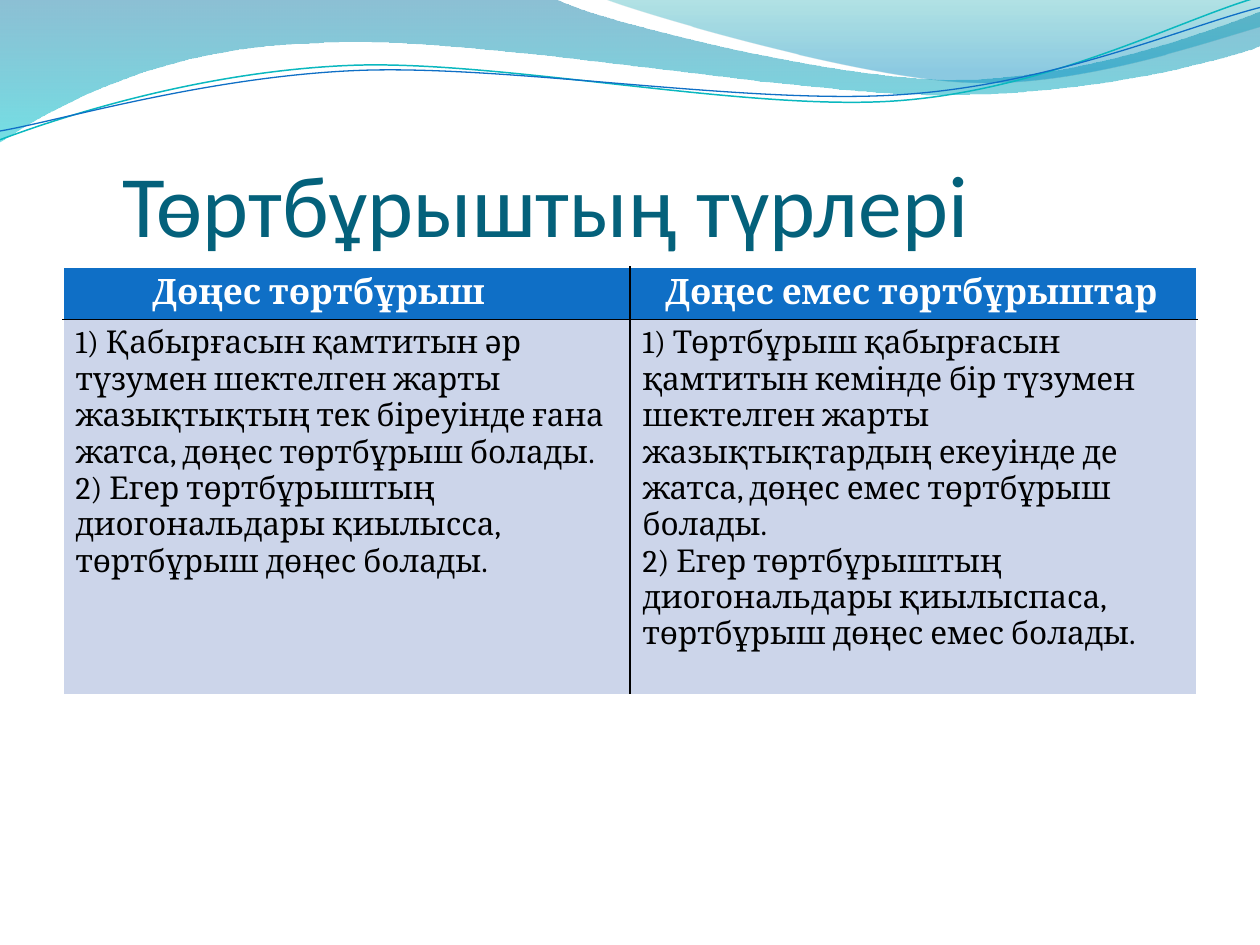
"""Build a slide comparing convex and non-convex quadrilaterals."""
from dataclasses import dataclass
from math import cos, radians, sin
from typing import NamedTuple

from lxml.etree import SubElement
from pptx import Presentation
from pptx.dml.color import RGBColor
from pptx.enum.text import MSO_ANCHOR
from pptx.oxml.ns import qn
from pptx.util import Inches, Pt


@dataclass(frozen=True)
class Theme:
    title_font: str = "Calibri"
    body_font: str = "Cambria"
    title_size: float = 50
    header_size: float = 20
    body_size: float = 18
    title: str = "04617B"
    accent: str = "0F6FC6"
    teal: str = "0AB8BF"
    band: str = "CCD5EA"
    white: str = "FFFFFF"
    black: str = "000000"
    wave_stops: tuple = ((0, "0074A1", 45), (1, "00C6CF", 55))
    crest_stops: tuple = ((0, "00A1A9", 30), (0.8, "008BBF", 45))


class Wave(NamedTuple):
    start: tuple
    segments: tuple
    stops: tuple = ()
    line: str = ""
    width: float = 0
    tilt: float = 0


class Column(NamedTuple):
    header: str
    indent: float
    rules: tuple


THEME = Theme()
PIVOT = (5, 0.58)

WAVES = (
    Wave((0, 0), (
        (4.4, -0.01),
        (4.76, 0.17, 6.64, 0.63, 7.58, 0.63),
        (8.53, 0.63, 9.58, 0.26, 10, 0.09),
        (10.01, 0.36),
        (9.83, 0.44, 8.7, 0.76, 7.46, 0.75),
        (6.22, 0.75, 3.82, 0.28, 2.57, 0.34),
        (1.29, 0.36, 0.46, 0.83, -0.01, 1.13),
        (0, 0),
    ), stops=THEME.wave_stops),
    Wave((4.79, -0.01), (
        (5.09, 0.11, 6.82, 0.62, 7.69, 0.65),
        (8.56, 0.69, 9.61, 0.32, 10, 0.21),
        (10, 0),
        (4.79, -0.01),
    ), stops=THEME.crest_stops),
    Wave((0, 1.11), (
        (0.48, 0.93, 1.58, 0.57, 2.77, 0.52),
        (3.95, 0.47, 5.93, 0.89, 7.13, 0.8),
        (8.33, 0.71, 9.38, 0.15, 9.98, -0.02),
    ), line=THEME.teal, width=0.85, tilt=-2.7),
    Wave((0, 1.04), (
        (0.47, 0.96, 1.64, 0.61, 2.83, 0.56),
        (4.03, 0.51, 5.97, 0.84, 7.17, 0.75),
        (8.36, 0.67, 9.41, 0.21, 10, 0.06),
    ), line=THEME.accent, width=0.75, tilt=-2.7),
)

COLUMNS = (
    Column("Дөңес төртбұрыш", 0.61, (
        "1) Қабырғасын қамтитын әр түзумен шектелген жарты жазықтықтың тек біреуінде ғана жатса, дөңес төртбұрыш болады.",
        "2) Егер төртбұрыштың диогональдары қиылысса, төртбұрыш дөңес болады.",
    )),
    Column("Дөңес емес төртбұрыштар", 0.18, (
        "1) Төртбұрыш қабырғасын қамтитын кемінде бір түзумен шектелген жарты жазықтықтардың екеуінде де жатса, дөңес емес төртбұрыш болады.",
        "2) Егер төртбұрыштың диогональдары қиылыспаса, төртбұрыш дөңес емес болады.",
    )),
)


def untilt(x: float, y: float, tilt: float) -> tuple:
    angle = radians(-tilt)
    dx, dy = x - PIVOT[0], y - PIVOT[1]
    return (Inches(PIVOT[0] + dx * cos(angle) - dy * sin(angle)),
            Inches(PIVOT[1] + dx * sin(angle) + dy * cos(angle)))


def add_outline(slide, wave: Wave):
    points = [wave.start] + [pt for seg in wave.segments for pt in zip(seg[::2], seg[1::2])]
    (x, y), *vertices = [untilt(px, py, wave.tilt) for px, py in points]
    builder = slide.shapes.build_freeform(x, y)
    builder.add_line_segments(vertices, close=bool(wave.stops))
    sp = builder.convert_to_shape()
    sp.rotation = wave.tilt % 360
    steps = iter(list(sp._element.iter(qn("a:lnTo"))))
    for segment in wave.segments:
        step = next(steps)
        if len(segment) == 6:
            curve = step.makeelement(qn("a:cubicBezTo"))
            step.addprevious(curve)
            for control in (step, next(steps), next(steps)):
                curve.append(control[0])
                control.getparent().remove(control)
    return sp


def add_wave(slide, wave: Wave) -> None:
    sp = add_outline(slide, wave)
    sp.shadow.inherit = False
    if not wave.stops:
        sp.fill.background()
        sp.line.color.rgb = RGBColor.from_string(wave.line)
        sp.line.width = Pt(wave.width)
        return
    sp.line.fill.background()
    sp.fill.gradient()
    sp.fill.gradient_angle = 270
    for stop, (position, color, _) in zip(sp.fill.gradient_stops, wave.stops):
        stop.position = position
        stop.color.rgb = RGBColor.from_string(color)
    colors = sp._element.spPr.iter(qn("a:srgbClr"))
    for color, (_, _, opacity) in zip(list(colors), wave.stops):
        SubElement(color, qn("a:alpha"), val=str(opacity * 1000))


def write_text(tf, *lines: str, font: str, size: float, color: str, bold: bool = False) -> None:
    tf.word_wrap = True
    for i, line in enumerate(lines):
        p = tf.add_paragraph() if i else tf.paragraphs[0]
        r = p.add_run()
        r.text = line
        r.font.name, r.font.size, r.font.bold = font, Pt(size), bold
        r.font.color.rgb = RGBColor.from_string(color)


def add_title(slide, text: str) -> None:
    sp = slide.shapes.add_textbox(Inches(0.5), Inches(0.77), Inches(9), Inches(1.25))
    tf = sp.text_frame
    tf.vertical_anchor = MSO_ANCHOR.BOTTOM
    tf.margin_left, tf.margin_top = Inches(0.47), Inches(0.05)
    tf.margin_right = tf.margin_bottom = 0
    write_text(tf, text, font=THEME.title_font, size=THEME.title_size, color=THEME.title)


def style_cell(cell, fill: str, inner: tuple) -> None:
    tc_pr = cell._tc.get_or_add_tcPr()
    for side in ("lnL", "lnR", "lnT", "lnB"):
        ln = SubElement(tc_pr, qn(f"a:{side}"), w=str(Pt(1)))
        color = THEME.black if side in inner else THEME.white
        SubElement(SubElement(ln, qn("a:solidFill")), qn("a:srgbClr"), val=color)
    cell.fill.solid()
    cell.fill.fore_color.rgb = RGBColor.from_string(fill)


def add_comparison(slide, columns: tuple) -> None:
    heights = (0.41, 2.98)
    frame = slide.shapes.add_table(len(heights), len(columns), Inches(0.5), Inches(2.12),
                                   Inches(9), Inches(sum(heights)))
    table = frame.table
    table.first_row = table.horz_banding = False
    for row, height in zip(table.rows, heights):
        row.height = Inches(height)
    for i, column in enumerate(columns):
        side = "lnL" if i else "lnR"
        header, body = table.cell(0, i), table.cell(1, i)
        style_cell(header, THEME.accent, (side, "lnB"))
        style_cell(body, THEME.band, (side, "lnT"))
        header.margin_left = Inches(0.1 + column.indent)
        header.margin_bottom = Inches(0.03)
        write_text(header.text_frame, column.header, font=THEME.body_font,
                   size=THEME.header_size, color=THEME.white, bold=True)
        write_text(body.text_frame, *column.rules, font=THEME.body_font,
                   size=THEME.body_size, color=THEME.black)


def main() -> None:
    prs = Presentation()
    prs.slide_width, prs.slide_height = Inches(10), Inches(7.5)
    slide = prs.slides.add_slide(prs.slide_layouts[6])
    for wave in WAVES:
        add_wave(slide, wave)
    add_title(slide, "Төртбұрыштың түрлері")
    add_comparison(slide, COLUMNS)
    prs.save("out.pptx")


if __name__ == "__main__":
    main()
